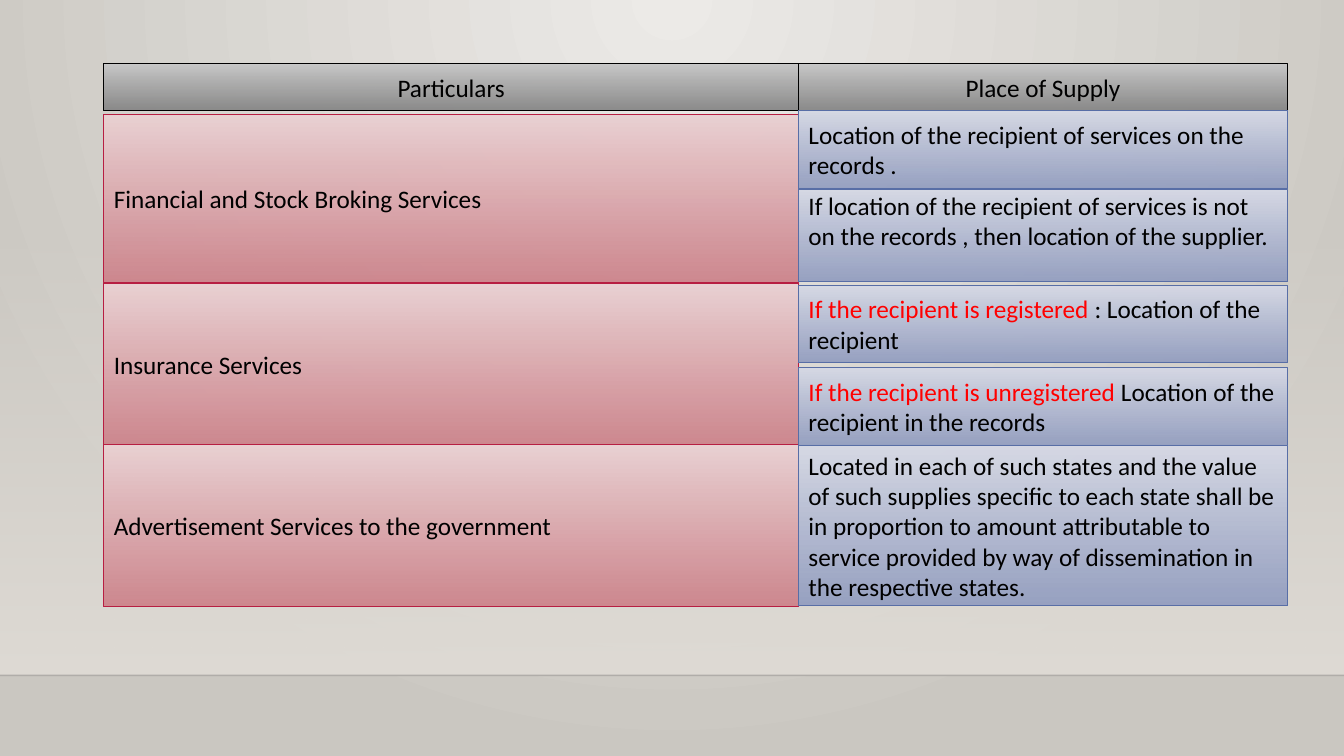
from lxml.etree import SubElement
from pptx import Presentation
from pptx.dml.color import RGBColor
from pptx.enum.shapes import MSO_CONNECTOR, MSO_SHAPE
from pptx.enum.text import MSO_ANCHOR, PP_ALIGN
from pptx.oxml.ns import qn
from pptx.util import Inches, Pt

# Fine grid: 1333 columns by 750 rows
UNIT = Inches(0.01)
COLUMNS, ROWS = 1333, 750

BLACK = RGBColor(0x00, 0x00, 0x00)
RED = RGBColor(0xFF, 0x00, 0x00)
WALL_LIGHT = RGBColor(0xEC, 0xEA, 0xE7)
WALL_DARK = RGBColor(0xCA, 0xC7, 0xC1)
HAZE = RGBColor(0xDF, 0xDB, 0xD5)
FLOOR_EDGE = RGBColor(0x00, 0x00, 0x01)

# Top colour, bottom colour, outline
GREY = (RGBColor(0xC8, 0xC8, 0xC8), RGBColor(0x84, 0x84, 0x84), BLACK)
ROSE = (RGBColor(0xEA, 0xD1, 0xD3), RGBColor(0xCD, 0x82, 0x8A),
        RGBColor(0xB7, 0x1E, 0x42))
BLUE = (RGBColor(0xD6, 0xD9, 0xE5), RGBColor(0x92, 0x9D, 0xC0),
        RGBColor(0x58, 0x6E, 0xA6))

HEADINGS = ("Particulars", "Place of Supply")
HEADING_ROWS = 47

# Top and height within the comparison, then the service
SERVICES = [
    (51, 166, "Financial and Stock Broking Services"),
    (218, 161, "Insurance Services"),
    (378, 161, "Advertisement Services to the government"),
]

# Top and height, space kept free below the text, then the coloured runs
PLACES = [
    (47, 77, 0, [("Location of the recipient of services on the records .", BLACK)]),
    (125, 91, 30, [("If location of the recipient of services is not on the "
                    "records , then location of the supplier.", BLACK)]),
    (220, 77, 0, [("If the recipient is registered ", RED),
                  (": Location of the recipient", BLACK)]),
    (302, 77, 0, [("If the recipient is unregistered ", RED),
                  ("Location of the recipient in the records", BLACK)]),
    (379, 159, 0, [("Located in each of such states and the value of such "
                    "supplies specific to each state shall be in proportion to "
                    "amount attributable to service provided by way of "
                    "dissemination in the respective states.", BLACK)]),
]


def set_alpha(color_parent, percent):
    color = color_parent.find(".//" + qn("a:srgbClr"))
    SubElement(color, qn("a:alpha"), val=str(percent * 1000))


def fill_gradient(fill, owner, colors, alphas=(100, 100)):
    """Apply a two-stop gradient and return its XML element."""
    fill.gradient()
    for stop, color, position in zip(fill.gradient_stops, colors, (0, 1)):
        stop.color.rgb = color
        stop.position = position
    gradient = owner.find(".//" + qn("a:gradFill"))
    for stop_xml, alpha in zip(gradient.iter(qn("a:gs")), alphas):
        if alpha < 100:
            set_alpha(stop_xml, alpha)
    return gradient


def add_panel(slide, box, colors, alphas):
    left, top, width, height = (round(UNIT * length) for length in box)
    panel = slide.shapes.add_shape(MSO_SHAPE.RECTANGLE, left, top, width, height)
    panel.shadow.inherit = False
    fill_gradient(panel.fill, panel.element.spPr, colors, alphas)
    panel.fill.gradient_angle = 270
    return panel


def add_cell(slide, box, palette, runs, alignment, space_below=0):
    cell = add_panel(slide, box, palette[:2], (100, 92))
    cell.line.color.rgb = palette[2]
    cell.line.width = Pt(0.75)
    frame = cell.text_frame
    frame.word_wrap = True
    frame.vertical_anchor = MSO_ANCHOR.MIDDLE
    frame.margin_bottom = Inches(0.05) + UNIT * space_below
    paragraph = frame.paragraphs[0]
    paragraph.alignment = alignment
    for text, color in runs:
        run = paragraph.add_run()
        run.text = text
        run.font.name = "Calibri"
        run.font.size = Pt(18)
        run.font.color.rgb = color


def add_backdrop(slide):
    # Radial wall light from the top centre
    wall = fill_gradient(slide.background.fill, slide.element,
                         (WALL_LIGHT, WALL_DARK))
    wall.remove(wall.find(qn("a:lin")))
    glow = SubElement(wall, qn("a:path"), path="circle")
    SubElement(glow, qn("a:fillToRect"), l="43000", t="0", r="43000", b="100000")

    # Haze that thickens down to the floor
    haze_top, floor_top = 221, 670
    haze = add_panel(slide, (0, haze_top, COLUMNS, floor_top - haze_top),
                     (HAZE, HAZE), (0, 100))
    haze.line.fill.background()

    # Floor edge
    edge = slide.shapes.add_connector(MSO_CONNECTOR.STRAIGHT, 0, UNIT * floor_top,
                                      UNIT * COLUMNS, UNIT * floor_top)
    edge.line.color.rgb = FLOOR_EDGE
    edge.line.width = Pt(1)
    set_alpha(edge.line._get_or_add_ln(), 20)
    SubElement(edge.element.spPr, qn("a:effectLst"))


def add_comparison(slide, left, top, width):
    service_width = 689
    place_left, place_width = left + service_width, width - service_width

    # Headings
    for heading, x, w in zip(HEADINGS, (left, place_left),
                             (service_width, place_width)):
        add_cell(slide, (x, top, w, HEADING_ROWS), GREY, [(heading, BLACK)],
                 PP_ALIGN.CENTER)

    # Services on the left
    for offset, height, service in SERVICES:
        add_cell(slide, (left, top + offset, service_width, height), ROSE,
                 [(service, BLACK)], PP_ALIGN.JUSTIFY)

    # Places of supply on the right
    for offset, height, space_below, runs in PLACES:
        add_cell(slide, (place_left, top + offset, place_width, height), BLUE,
                 runs, PP_ALIGN.LEFT, space_below)


def main():
    presentation = Presentation()
    presentation.slide_width = UNIT * COLUMNS
    presentation.slide_height = UNIT * ROWS
    slide = presentation.slides.add_slide(presentation.slide_layouts[6])
    add_backdrop(slide)
    add_comparison(slide, left=103, top=63, width=1174)
    presentation.save("out.pptx")


if __name__ == "__main__":
    main()
